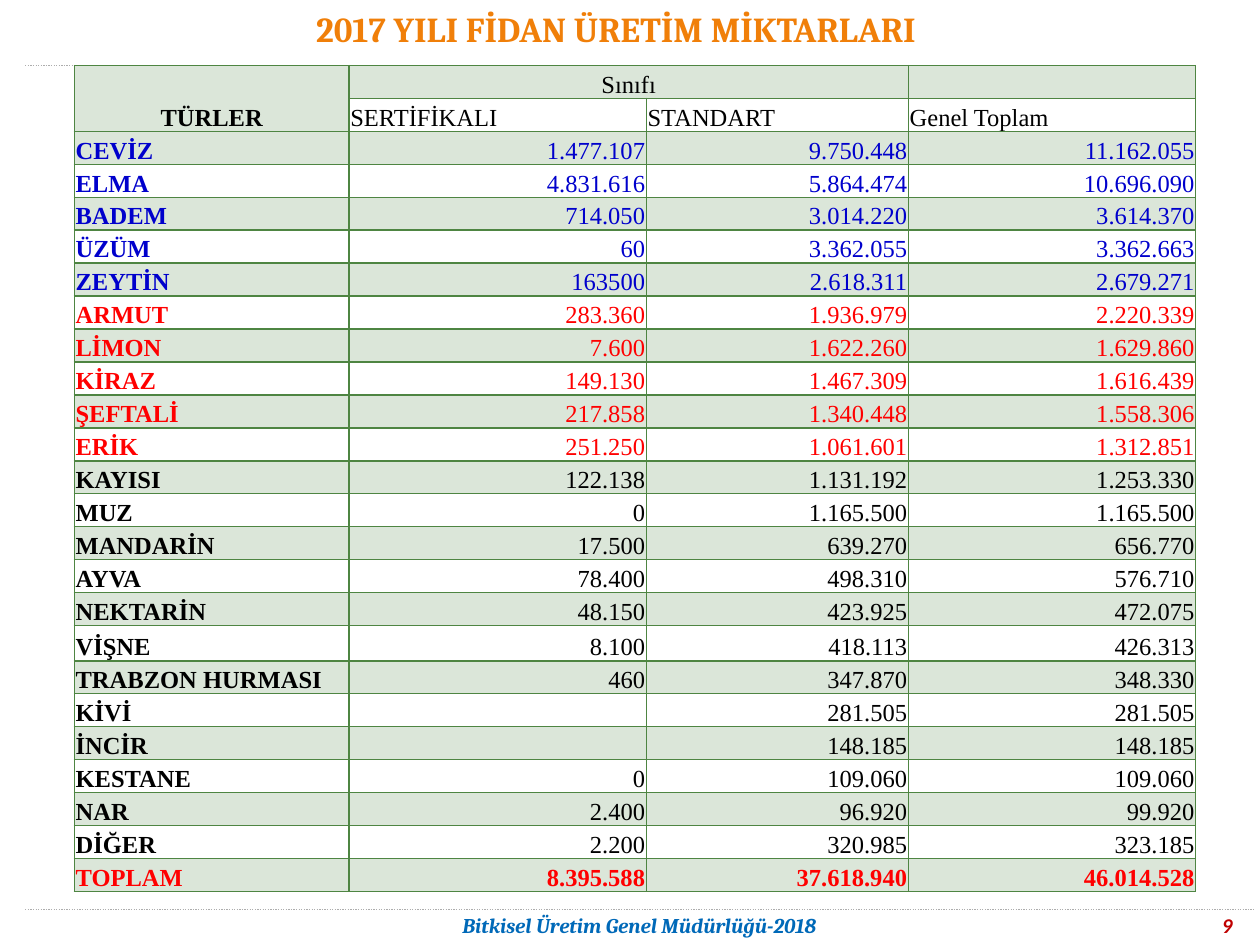
from dataclasses import dataclass
from typing import NamedTuple

from lxml.etree import SubElement
from pptx import Presentation
from pptx.dml.color import RGBColor
from pptx.enum.dml import MSO_LINE
from pptx.enum.shapes import MSO_CONNECTOR
from pptx.enum.text import MSO_ANCHOR, PP_ALIGN
from pptx.oxml import parse_xml
from pptx.oxml.ns import nsdecls, qn
from pptx.util import Inches, Pt


@dataclass(frozen=True)
class Theme:
    title: str = "F07F09"
    footer: str = "0069B8"
    number: str = "C00000"
    rule: str = "ADADAD"
    green: str = "4E8542"
    black: str = "000000"
    blue: str = "0000CC"
    red: str = "FF0000"
    title_size: int = 20
    table_size: int = 14
    footer_size: int = 12
    heading_font: str = "Cambria"
    number_font: str = "Calibri"
    table_font: str = "Times New Roman"


class Style(NamedTuple):
    font: str
    size: int
    color: str
    bold: bool = False
    italic: bool = False


class Species(NamedTuple):
    name: str
    certified: str
    standard: str
    total: str
    color: str


T = Theme()
COL_WIDTHS = (2.18, 2.36, 2.08, 2.28)
TABLE_HEIGHT = 6.56
TALL_ROW, TALL_HEIGHT = 17, 0.28
HEADER_ROWS = 2

SPECIES = [
    Species("CEVİZ", "1.477.107", "9.750.448", "11.162.055", T.blue),
    Species("ELMA", "4.831.616", "5.864.474", "10.696.090", T.blue),
    Species("BADEM", "714.050", "3.014.220", "3.614.370", T.blue),
    Species("ÜZÜM", "60", "3.362.055", "3.362.663", T.blue),
    Species("ZEYTİN", "163500", "2.618.311", "2.679.271", T.blue),
    Species("ARMUT", "283.360", "1.936.979", "2.220.339", T.red),
    Species("LİMON", "7.600", "1.622.260", "1.629.860", T.red),
    Species("KİRAZ", "149.130", "1.467.309", "1.616.439", T.red),
    Species("ŞEFTALİ", "217.858", "1.340.448", "1.558.306", T.red),
    Species("ERİK", "251.250", "1.061.601", "1.312.851", T.red),
    Species("KAYISI", "122.138", "1.131.192", "1.253.330", T.black),
    Species("MUZ", "0", "1.165.500", "1.165.500", T.black),
    Species("MANDARİN", "17.500", "639.270", "656.770", T.black),
    Species("AYVA", "78.400", "498.310", "576.710", T.black),
    Species("NEKTARİN", "48.150", "423.925", "472.075", T.black),
    Species("VİŞNE", "8.100", "418.113", "426.313", T.black),
    Species("TRABZON HURMASI", "460", "347.870", "348.330", T.black),
    Species("KİVİ", "", "281.505", "281.505", T.black),
    Species("İNCİR", "", "148.185", "148.185", T.black),
    Species("KESTANE", "0", "109.060", "109.060", T.black),
    Species("NAR", "2.400", "96.920", "99.920", T.black),
    Species("DİĞER", "2.200", "320.985", "323.185", T.black),
    Species("TOPLAM", "8.395.588", "37.618.940", "46.014.528", T.red),
]


def write(tf, text: str, style: Style, align=PP_ALIGN.LEFT) -> None:
    p = tf.paragraphs[0]
    p.alignment = align
    if not text:
        # An empty cell still needs the type size, or its row grows.
        SubElement(p._p, qn("a:endParaRPr"), sz=str(style.size * 100))
        return
    r = p.add_run()
    r.text = text
    r.font.name = style.font
    r.font.size = Pt(style.size)
    r.font.bold = style.bold
    r.font.italic = style.italic
    r.font.color.rgb = RGBColor.from_string(style.color)


def add_rule(slide, x1: float, x2: float, y: float) -> None:
    line = slide.shapes.add_connector(
        MSO_CONNECTOR.STRAIGHT, Inches(x1), Inches(y), Inches(x2), Inches(y))
    line.line.color.rgb = RGBColor.from_string(T.rule)
    line.line.width = Pt(0.75)
    line.line.dash_style = MSO_LINE.ROUND_DOT
    SubElement(line._element.spPr, qn("a:effectLst"))


def add_label(slide, box: tuple, text: str, style: Style, align, anchor) -> None:
    tf = slide.shapes.add_textbox(*map(Inches, box)).text_frame
    tf.word_wrap = True
    tf.vertical_anchor = anchor
    write(tf, text, style, align)


def format_cell(cell, banded: bool) -> None:
    cell.margin_left = cell.margin_right = cell.margin_top = Inches(0.01)
    cell.margin_bottom = 0
    cell.vertical_anchor = MSO_ANCHOR.BOTTOM
    if banded:
        cell.fill.solid()
        cell.fill.fore_color.rgb = RGBColor.from_string(T.green)
    else:
        cell.fill.background()
    tc_pr = cell._tc.get_or_add_tcPr()
    for clr in tc_pr.iter(qn("a:srgbClr")):
        SubElement(clr, qn("a:alpha"), val="20000")
    for i, side in enumerate(("lnL", "lnR", "lnT", "lnB")):
        tc_pr.insert(i, parse_xml(
            f'<a:{side} {nsdecls("a")} w="{Pt(1)}"><a:solidFill>'
            f'<a:srgbClr val="{T.green}"/></a:solidFill></a:{side}>'))


def add_production_table(slide) -> None:
    n_rows = HEADER_ROWS + len(SPECIES)
    table = slide.shapes.add_table(
        n_rows, len(COL_WIDTHS), Inches(0.59), Inches(0.52),
        Inches(sum(COL_WIDTHS)), Inches(TABLE_HEIGHT)).table
    table.first_row = table.horz_banding = False
    for col, width in zip(table.columns, COL_WIDTHS):
        col.width = Inches(width)
    row_height = (TABLE_HEIGHT - TALL_HEIGHT) / (n_rows - 1)
    for i, row in enumerate(table.rows):
        row.height = Inches(TALL_HEIGHT if i == TALL_ROW else row_height)
        for cell in row.cells:
            format_cell(cell, banded=i % 2 == 0)

    table.cell(0, 0).merge(table.cell(1, 0))
    table.cell(0, 1).merge(table.cell(0, 2))
    head = Style(T.table_font, T.table_size, T.black)
    write(table.cell(0, 0).text_frame, "TÜRLER", head._replace(bold=True),
          PP_ALIGN.CENTER)
    write(table.cell(0, 1).text_frame, "Sınıfı", head, PP_ALIGN.CENTER)
    write(table.cell(0, 3).text_frame, "", head)
    for j, text in enumerate(("SERTİFİKALI", "STANDART", "Genel Toplam"), 1):
        write(table.cell(1, j).text_frame, text, head)

    for i, sp in enumerate(SPECIES, HEADER_ROWS):
        for j, text in enumerate((sp.name, sp.certified, sp.standard, sp.total)):
            bold = j == 0 or i == n_rows - 1
            write(table.cell(i, j).text_frame, text,
                  Style(T.table_font, T.table_size, sp.color, bold),
                  PP_ALIGN.RIGHT if j else PP_ALIGN.LEFT)


def add_title(slide, text: str) -> None:
    sp = slide.shapes.title
    sp.left, sp.top, sp.width, sp.height = map(Inches, (0.28, 0, 9.06, 0.46))
    tf = sp.text_frame
    tf.margin_left = Inches(0.26)
    tf.vertical_anchor = MSO_ANCHOR.MIDDLE
    write(tf, text, Style(T.heading_font, T.title_size, T.title, True),
          PP_ALIGN.CENTER)


def main() -> None:
    prs = Presentation()
    prs.slide_width, prs.slide_height = Inches(10), Inches(7.5)
    slide = prs.slides.add_slide(prs.slide_layouts[5])
    add_rule(slide, 0.2, 9.17, 0.52)
    add_rule(slide, 0.2, 9.96, 7.22)
    add_label(slide, (9.25, 7.19, 0.63, 0.24), "9",
              Style(T.number_font, T.footer_size, T.number, True, True),
              PP_ALIGN.RIGHT, MSO_ANCHOR.TOP)
    add_label(slide, (1.77, 7.22, 6.61, 0.24), "Bitkisel Üretim Genel Müdürlüğü-2018",
              Style(T.heading_font, T.footer_size, T.footer, True, True),
              PP_ALIGN.CENTER, MSO_ANCHOR.MIDDLE)
    add_title(slide, "2017 YILI FİDAN ÜRETİM MİKTARLARI")
    add_production_table(slide)
    prs.save("out.pptx")


if __name__ == "__main__":
    main()
